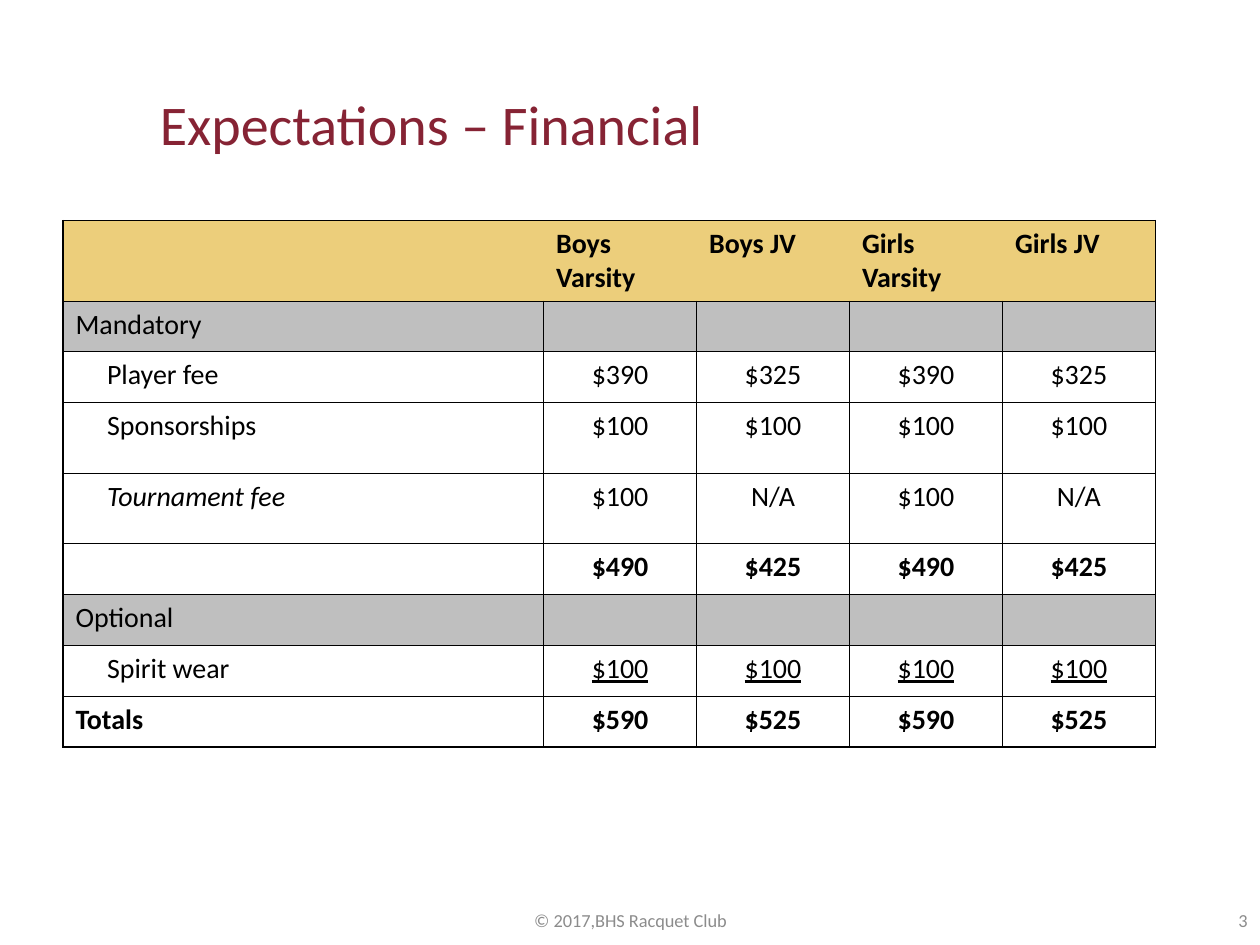
"""Build the slide on financial expectations for racquet club players."""
import pptx
import pptx.util
import pptx.dml.color
import pptx.enum.text
import pptx.oxml
import pptx.oxml.ns

ALIGN = pptx.enum.text.PP_ALIGN
ANCHOR = pptx.enum.text.MSO_ANCHOR
FONT, INK, MAROON, MUTED = "Calibri", "000000", "862334", "8C8C8C"
GOLD, GREY, WHITE = "ECCE7B", "BFBFBF", "FFFFFF"

SLIDE_TEXTS = [
    ("Expectations – Financial", (1.17, 0.67, 7.98, 0.62), 32, MAROON, ALIGN.LEFT),
    ("© 2017,BHS Racquet Club", (3.42, 7.1, 3.17, 0.4), 10.5, MUTED, ALIGN.CENTER),
    ("3", (7.67, 7.1, 2.33, 0.4), 10.5, MUTED, ALIGN.RIGHT),
]
BOYS_GIRLS = 2
FEES = [
    ("header", "", ["Boys Varsity", "Boys JV", "Girls Varsity", "Girls JV"]),
    ("section", "Mandatory", [""] * 4),
    ("item", "Player fee", ["$390", "$325"] * BOYS_GIRLS),
    ("tall item", "Sponsorships", ["$100"] * 4),
    ("tournament", "Tournament fee", ["$100", "N/A"] * BOYS_GIRLS),
    ("total", "", ["$490", "$425"] * BOYS_GIRLS),
    ("section", "Optional", [""] * 4),
    ("last item", "Spirit wear", ["$100"] * 4),
    ("total", "Totals", ["$590", "$525"] * BOYS_GIRLS),
]
FILLS = {"header": GOLD, "section": GREY}
TALL = {"header": 0.64, "tall item": 0.56, "tournament": 0.56}
INDENTED = ("item", "tall item", "tournament", "last item")
LEFT, TOP, WIDTH, HEIGHT = 0.5, 1.75, 8.67, 4.18
LABEL_WIDTH = 0.44 * WIDTH


def rgb(value):
    """Return a colour from a hex string."""
    return pptx.dml.color.RGBColor.from_string(value)


def write(paragraph, text, size, colour, align):
    """Add one styled run and return its font."""
    paragraph.alignment = align
    run = paragraph.add_run()
    run.text = text
    run.font.name, run.font.size = FONT, pptx.util.Pt(size)
    run.font.color.rgb = rgb(colour)
    return run.font


def add_text(slide, text, box, size, colour, align):
    """Add a vertically centred line of text."""
    frame = slide.shapes.add_textbox(*map(pptx.util.Inches, box)).text_frame
    frame.word_wrap = True
    frame.vertical_anchor = ANCHOR.MIDDLE
    write(frame.paragraphs[0], text, size, colour, align)


def set_borders(cell, sides):
    """Rule the given sides of a cell and clear the others."""
    properties = cell._tc.get_or_add_tcPr()
    namespace = pptx.oxml.ns.nsdecls("a")
    for position, side in enumerate("LRTB"):
        paint = (f'<a:solidFill><a:srgbClr val="{INK}"/></a:solidFill>'
                 if side in sides else "<a:noFill/>")
        properties.insert(position, pptx.oxml.parse_xml(
            f'<a:ln{side} {namespace} w="{pptx.util.Pt(0.75)}">{paint}</a:ln{side}>'))


def fill_cell(cell, kind, column, text, last):
    """Fill, rule and write one cell of the fee table."""
    cell.fill.solid()
    cell.fill.fore_color.rgb = rgb(FILLS.get(kind, WHITE))
    sides = "LRTB"
    if kind == "header":
        sides = "TB" + ("L" if column == 0 else "") + ("R" if column == last else "")
    set_borders(cell, sides)
    if not text:
        return
    paragraph = cell.text_frame.paragraphs[0]
    if column == 0 and kind in INDENTED:
        paragraph._p.get_or_add_pPr().set("marL", str(pptx.util.Inches(0.25)))
    centred = column > 0 and kind != "header"
    font = write(paragraph, text, 16, INK, ALIGN.CENTER if centred else ALIGN.LEFT)
    font.bold = kind in ("header", "total")
    font.italic = kind == "tournament" and column == 0
    font.underline = kind == "last item" and column > 0


def add_fees(slide):
    """Add the fee table with equal fee columns and equal plain rows."""
    fee_count = len(FEES[0][2])
    box = map(pptx.util.Inches, (LEFT, TOP, WIDTH, HEIGHT))
    table = slide.shapes.add_table(len(FEES), fee_count + 1, *box).table
    for index, column in enumerate(table.columns):
        share = (WIDTH - LABEL_WIDTH) / fee_count if index else LABEL_WIDTH
        column.width = pptx.util.Inches(share)
    tall_heights = [TALL[kind] for kind, _, _ in FEES if kind in TALL]
    plain = (HEIGHT - sum(tall_heights)) / (len(FEES) - len(tall_heights))
    for row, (kind, label, fees) in zip(table.rows, FEES):
        row.height = pptx.util.Inches(TALL.get(kind, plain))
        for column, text in enumerate([label] + fees):
            fill_cell(row.cells[column], kind, column, text, fee_count)


def main():
    """Build and save the slide."""
    deck = pptx.Presentation()
    deck.slide_width, deck.slide_height = pptx.util.Inches(10), pptx.util.Inches(7.5)
    slide = deck.slides.add_slide(deck.slide_layouts[6])
    for entry in SLIDE_TEXTS:
        add_text(slide, *entry)
    add_fees(slide)
    deck.save("out.pptx")


if __name__ == "__main__":
    main()
